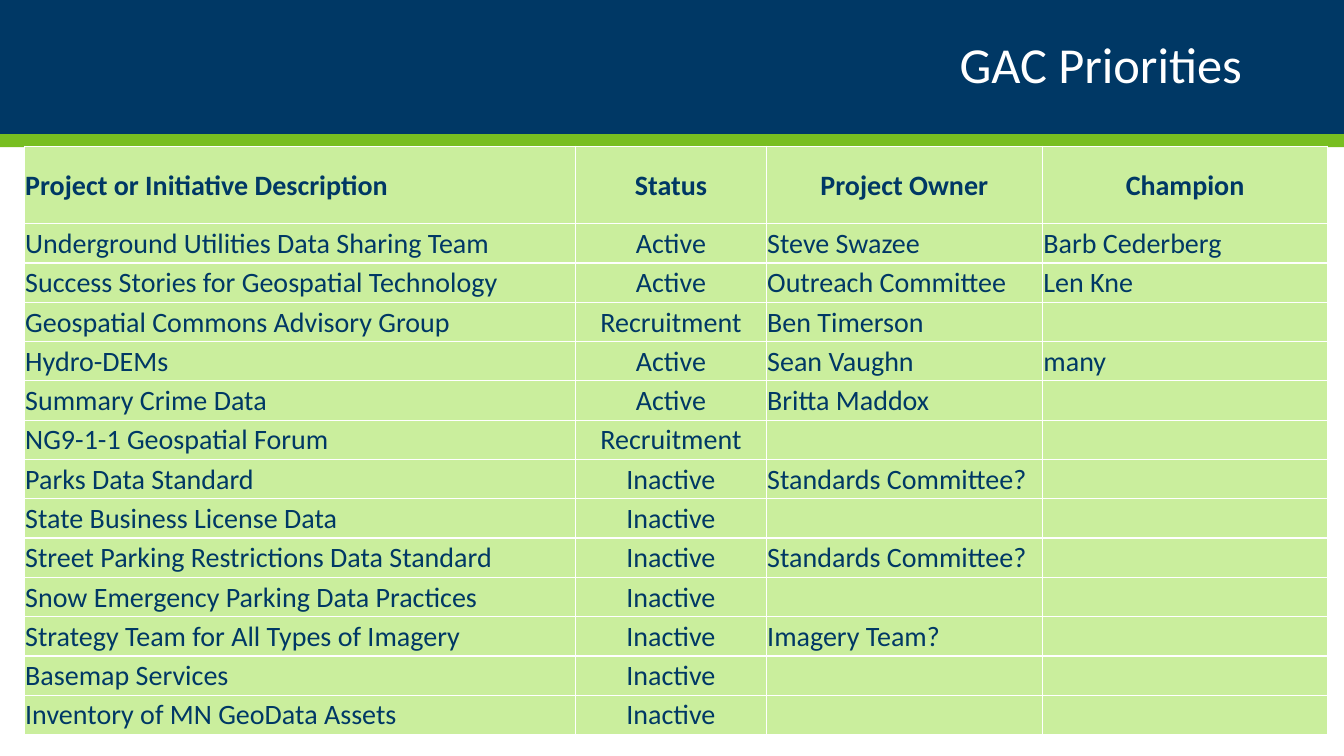
import pptx
import pptx.dml.color
import pptx.enum.shapes
import pptx.enum.text
import pptx.oxml
import pptx.oxml.ns
import pptx.util

Inches = pptx.util.Inches
Align = pptx.enum.text.PP_ALIGN
Anchor = pptx.enum.text.MSO_ANCHOR

COLORS = {"navy": "003865", "green": "78BE21", "pale": "CAEE9D", "white": "FFFFFF"}

HEADINGS = ("Project or Initiative Description", "Status", "Project Owner", "Champion")
PROJECTS = [
    ("Underground Utilities Data Sharing Team", "Active", "Steve Swazee", "Barb Cederberg"),
    ("Success Stories for Geospatial Technology", "Active", "Outreach Committee", "Len Kne"),
    ("Geospatial Commons Advisory Group", "Recruitment", "Ben Timerson", ""),
    ("Hydro-DEMs", "Active", "Sean Vaughn", "many"),
    ("Summary Crime Data", "Active", "Britta Maddox", ""),
    ("NG9-1-1 Geospatial Forum", "Recruitment", "", ""),
    ("Parks Data Standard", "Inactive", "Standards Committee?", ""),
    ("State Business License Data", "Inactive", "", ""),
    ("Street Parking Restrictions Data Standard", "Inactive", "Standards Committee?", ""),
    ("Snow Emergency Parking Data Practices", "Inactive", "", ""),
    ("Strategy Team for All Types of Imagery", "Inactive", "Imagery Team?", ""),
    ("Basemap Services", "Inactive", "", ""),
    ("Inventory of MN GeoData Assets", "Inactive", "", ""),
]
COLUMN_WIDTHS = (5.47, 1.89, 2.74, 2.83)
HEADER_HEIGHT, ROW_HEIGHT = 0.77, 0.39


def color(name):
    return pptx.dml.color.RGBColor.from_string(COLORS[name])


def write_text(frame, text, size=20, ink="navy", bold=False, align=Align.LEFT, spacing=None):
    para = frame.paragraphs[0]
    para.alignment = align
    para.line_spacing = spacing
    if text:
        span = para.add_run()
        span.text = text
        span.font.name = "Calibri"
        span.font.size = pptx.util.Pt(size)
        span.font.bold = bold
        span.font.color.rgb = color(ink)


class PrioritiesPage:
    def __init__(self, deck):
        self.page = deck.slides.add_slide(deck.slide_layouts[5])
        self.shapes = self.page.shapes

    def band(self, top, height, fill):
        box = self.shapes.add_shape(
            pptx.enum.shapes.MSO_SHAPE.RECTANGLE,
            0, Inches(top), Inches(13.33), Inches(height))
        box.shadow.inherit = False
        box.fill.solid()
        box.fill.fore_color.rgb = color(fill)
        box.line.fill.background()

    def title(self, text):
        box = self.shapes.title
        box.left, box.top = Inches(0.92), Inches(0.17)
        box.width, box.height = Inches(11.5), Inches(1)
        box.text_frame.vertical_anchor = Anchor.MIDDLE
        write_text(box.text_frame, text, size=36, ink="white", align=Align.RIGHT, spacing=0.9)
        # Bring the title in front of the bands
        self.shapes.element.append(box.element)

    def table(self, left, top, rows):
        height = HEADER_HEIGHT + ROW_HEIGHT * (len(rows) - 1)
        grid = self.shapes.add_table(
            len(rows), len(COLUMN_WIDTHS), Inches(left), Inches(top),
            Inches(sum(COLUMN_WIDTHS)), Inches(height)).table
        for column, width in zip(grid.columns, COLUMN_WIDTHS):
            column.width = Inches(width)
        for index, values in enumerate(rows):
            header = index == 0
            grid.rows[index].height = Inches(HEADER_HEIGHT if header else ROW_HEIGHT)
            for number, value in enumerate(values):
                centred = number == 1 or (header and number > 0)
                self.cell(grid.cell(index, number), value, bold=header,
                          align=Align.CENTER if centred else Align.LEFT)

    def cell(self, cell, text, **style):
        cell.margin_left = cell.margin_top = cell.margin_right = Inches(0.01)
        cell.margin_bottom = 0
        cell.vertical_anchor = Anchor.MIDDLE
        write_text(cell.text_frame, text, **style)
        # Borders come before the fill in the cell properties
        properties = cell._tc.get_or_add_tcPr()
        for side in ("lnL", "lnR", "lnT", "lnB"):
            properties.append(pptx.oxml.parse_xml(
                f'<a:{side} {pptx.oxml.ns.nsdecls("a")} w="12700"><a:solidFill>'
                f'<a:srgbClr val="{COLORS["white"]}"/></a:solidFill></a:{side}>'))
        cell.fill.solid()
        cell.fill.fore_color.rgb = color("pale")


def main():
    deck = pptx.Presentation()
    deck.slide_width, deck.slide_height = Inches(13.33), Inches(7.5)
    page = PrioritiesPage(deck)

    # Header bands and title
    page.band(0, 1.33, "navy")
    page.band(1.33, 0.13, "green")
    page.title("GAC Priorities")

    # Project table
    page.table(0.24, 1.45, [HEADINGS] + PROJECTS)

    deck.save("out.pptx")


if __name__ == "__main__":
    main()
